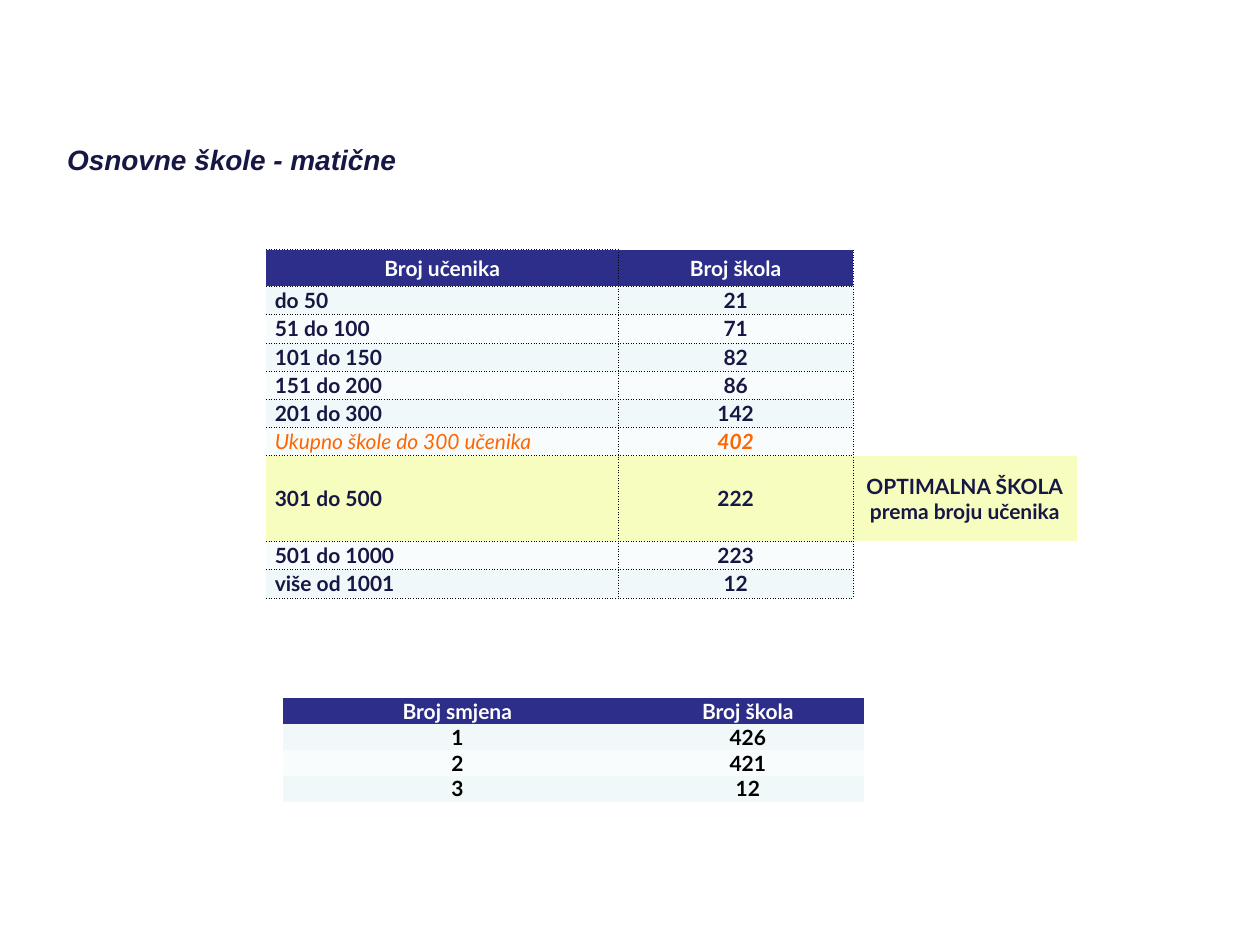
from lxml import etree
from pptx import Presentation
from pptx.dml.color import RGBColor
from pptx.enum.text import MSO_ANCHOR, PP_ALIGN
from pptx.oxml.ns import qn
from pptx.util import Cm, Pt

MID, TOP = MSO_ANCHOR.MIDDLE, MSO_ANCHOR.TOP
LEFT, CENTER = PP_ALIGN.LEFT, PP_ALIGN.CENTER

NAVY = RGBColor(0x17, 0x17, 0x45)
BLUE = RGBColor(0x2D, 0x2D, 0x8A)
WHITE = RGBColor(0xFF, 0xFF, 0xFF)
BLACK = RGBColor(0, 0, 0)
ORANGE = RGBColor(0xFF, 0x66, 0x00)
YELLOW = RGBColor(0xF7, 0xFD, 0xBF)
BANDS = RGBColor(0xF8, 0xFC, 0xFC), RGBColor(0xF1, 0xF8, 0xF9)
NO_STYLE = "{2D5ABB26-0587-4C30-8999-92F81FD0307C}"

SIZES = [
    ("Broj učenika", "Broj škola"),
    ("do 50", "21"),
    ("51 do 100", "71"),
    ("101 do 150", "82"),
    ("151 do 200", "86"),
    ("201 do 300", "142"),
    ("Ukupno škole do 300 učenika", "402"),
    ("301 do 500", "222", "OPTIMALNA ŠKOLA\nprema broju učenika"),
    ("501 do 1000", "223"),
    ("više od 1001", "12"),
]
TOTAL, BEST = 6, 7  # rows with their own look
SHIFTS = [("Broj smjena", "Broj škola"), ("1", "426"), ("2", "421"), ("3", "12")]


def add_table(slide, left, top, cols, rows):
    """Add an unstyled table with the given column widths and row heights."""
    frame = slide.shapes.add_table(len(rows), len(cols), Cm(left), Cm(top),
                                   Cm(sum(cols)), Cm(sum(rows)))
    table = frame.table
    table.first_row = table.horz_banding = False
    frame._element.find(".//" + qn("a:tableStyleId")).text = NO_STYLE
    for col, width in zip(table.columns, cols):
        col.width = Cm(width)
    for row, height in zip(table.rows, rows):
        row.height = Cm(height)
    return table


def set_edges(cell, sides, dash):
    """Draw thin dotted lines on the named sides, in schema order L R T B."""
    props = cell._tc.get_or_add_tcPr()
    for side in sides:
        line = etree.SubElement(props, qn("a:ln" + side), w=str(Pt(0.25)))
        fill = etree.SubElement(line, qn("a:solidFill"))
        etree.SubElement(fill, qn("a:srgbClr"), val=str(BLACK))
        etree.SubElement(line, qn("a:prstDash"), val=dash)


def set_cell(cell, text, fill, color, align=CENTER, bold=True, italic=False):
    cell.margin_left = cell.margin_right = Cm(0.18)
    cell.margin_top = cell.margin_bottom = 0
    cell.vertical_anchor = MID
    if not text:
        # Small end mark, so that an empty cell does not stretch its row
        para = cell.text_frame.paragraphs[0]._p
        etree.SubElement(para, qn("a:endParaRPr"), sz="1200")
        return
    cell.fill.solid()
    cell.fill.fore_color.rgb = fill
    cell.text_frame.text = text
    for para in cell.text_frame.paragraphs:
        para.alignment = align
        for run in para.runs:
            font = run.font
            font.name, font.size = "Lato", Pt(12)
            font.bold, font.italic = bold, italic
            font.color.rgb = color


def add_heading(slide, left, top, width, height):
    box = slide.placeholders[1]
    box.left, box.top, box.width, box.height = map(Cm, (left, top, width, height))
    frame = box.text_frame
    frame.vertical_anchor = TOP
    frame.margin_top = Cm(0.82)
    frame.text = "Osnovne škole - matične"
    para = frame.paragraphs[0]
    props = para._p.get_or_add_pPr()
    props.set("marL", "0")
    props.set("indent", "0")
    etree.SubElement(props, qn("a:buNone"))
    para.space_before = Pt(0)
    font = para.runs[0].font
    font.name, font.size = "Arial", Pt(16)
    font.bold = font.italic = True
    font.color.rgb = NAVY


def add_sizes(slide, left, top):
    """Schools by number of pupils, with a note beside the best size."""
    heights = [0.74] + [0.57] * (len(SIZES) - 1)
    heights[BEST] = 1.73
    table = add_table(slide, left, top, (7.11, 4.72, 4.52), heights)
    for r, row in enumerate(SIZES):
        head, total = r == 0, r == TOTAL
        fill = BLUE if head else YELLOW if r == BEST else BANDS[r % 2]
        color = WHITE if head else ORANGE if total else NAVY
        edges = ("RTB", "LRB" if head else "LTB", "")
        for c, sides in enumerate(edges):
            cell = table.cell(r, c)
            set_edges(cell, sides, "sysDot" if head else "dot")
            set_cell(cell, row[c] if c < len(row) else "", fill, color,
                     align=LEFT if c == 0 and not head else CENTER,
                     bold=not (total and c == 0), italic=total)


def add_shifts(slide, left, top):
    """Schools by number of shifts."""
    table = add_table(slide, left, top, (7.04, 4.67), [0.52] * len(SHIFTS))
    for r, row in enumerate(SHIFTS):
        fill, color = (BANDS[r % 2], BLACK) if r else (BLUE, WHITE)
        for c, text in enumerate(row):
            set_cell(table.cell(r, c), text, fill, color)


def main():
    prs = Presentation()
    prs.slide_width, prs.slide_height = Cm(25.4), Cm(19.05)
    slide = prs.slides.add_slide(prs.slide_layouts[1])
    title = slide.shapes.title._element
    title.getparent().remove(title)
    add_heading(slide, 1.1, 2.05, 23.57, 16.08)
    add_sizes(slide, 5.36, 5.03)
    add_shifts(slide, 5.7, 14.08)
    prs.save("out.pptx")


if __name__ == "__main__":
    main()
